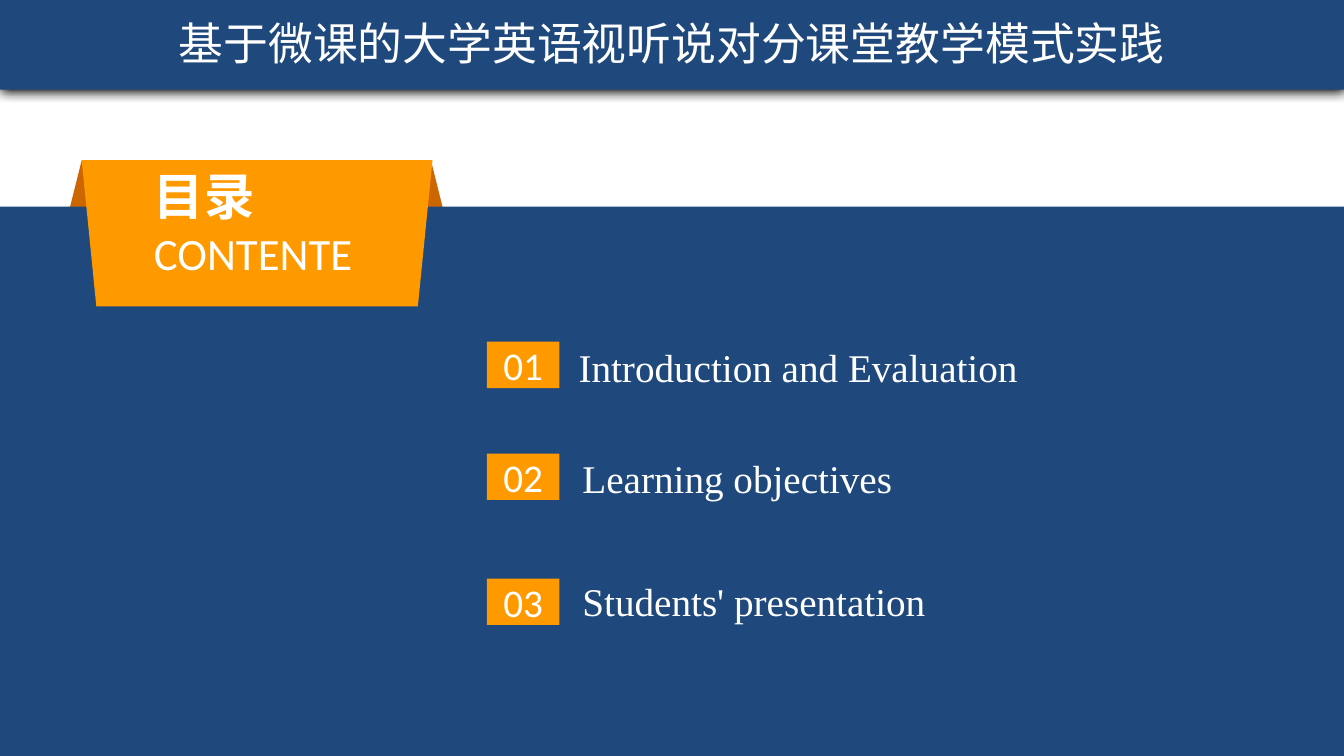
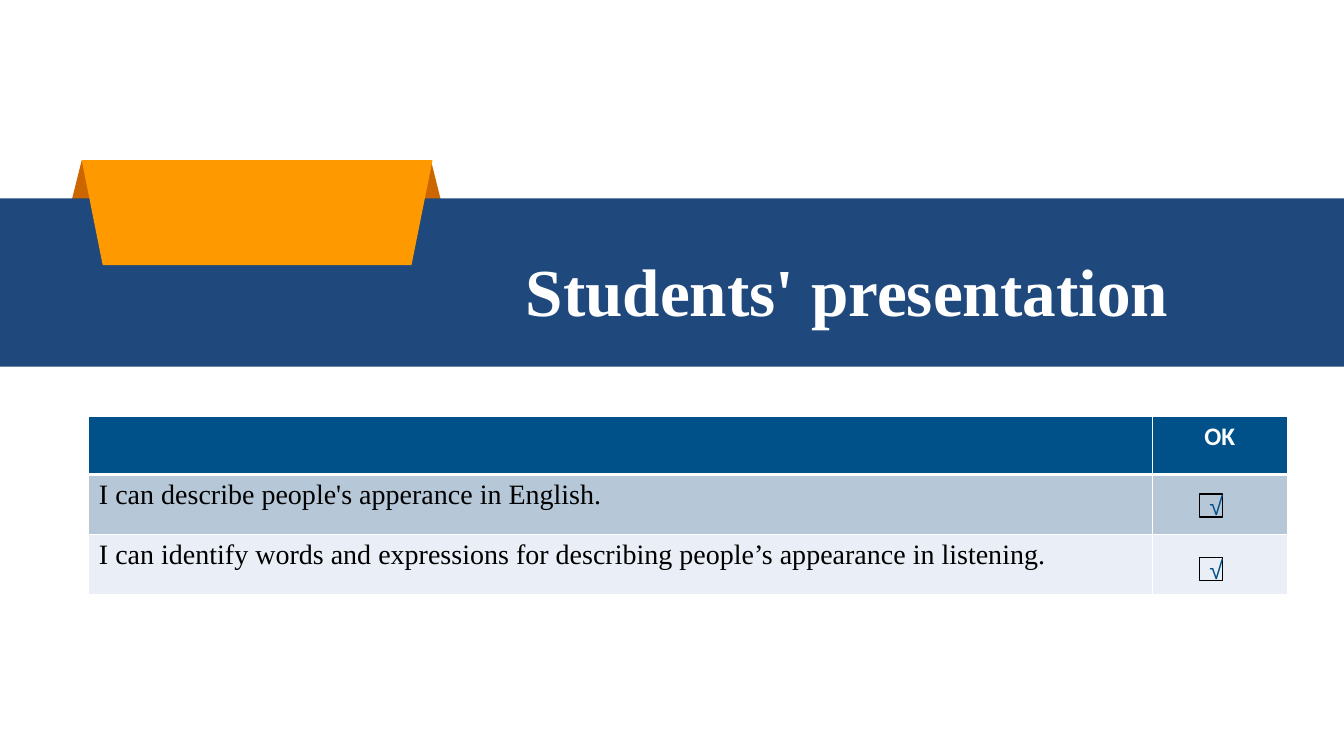
import pptx
import pptx.util
import pptx.dml.color
import pptx.enum.shapes
import pptx.enum.text
import pptx.oxml
import pptx.oxml.ns

Cm = pptx.util.Cm
Pt = pptx.util.Pt
MSO = pptx.enum.shapes.MSO_SHAPE
PP = pptx.enum.text.PP_ALIGN
ANCHOR = pptx.enum.text.MSO_ANCHOR
NS = pptx.oxml.ns.nsdecls("a")
W, H = 33.87, 19.05
COLORS = {
    "navy": "1F487C", "orange": "FF9900", "fold": "CC6600", "white": "FFFFFF",
    "black": "000000", "header": "00518A", "row_dark": "B6C7D8", "row_light": "EAEFF7",
}


def rgb(name):
    return pptx.dml.color.RGBColor.from_string(COLORS[name])


def write(tf, text, size=28, font="Calibri", color="white", bold=False,
          align=PP.LEFT, anchor=ANCHOR.TOP):
    tf.word_wrap = True
    tf.vertical_anchor = anchor
    for i, line in enumerate(text.split("\n")):
        p = tf.add_paragraph() if i else tf.paragraphs[0]
        p.alignment = align
        r = p.add_run()
        r.text = line
        r.font.size = Pt(size)
        r.font.name = font
        r.font.bold = bold
        r.font.color.rgb = rgb(color)


def add_shape(s, kind, left, top, width, height, fill=None, line=None):
    sp = s.shapes.add_shape(kind, Cm(left), Cm(top), Cm(width), Cm(height))
    sp.shadow.inherit = False
    if fill:
        sp.fill.solid()
        sp.fill.fore_color.rgb = rgb(fill)
    else:
        sp.fill.background()
    if line:
        sp.line.color.rgb = rgb(line)
        sp.line.width = Pt(1)
    else:
        sp.line.fill.background()
    return sp


prs = pptx.Presentation()
prs.slide_width, prs.slide_height = Cm(W), Cm(H)

for band_top, band_height, ribbon_height, slant in [(5.21, 13.84, 3.68, 0.1), (5, 4.24, 2.64, 0.2)]:
    s = prs.slides.add_slide(prs.slide_layouts[6])
    add_shape(s, MSO.TRAPEZOID, 1.57, 4.04, 9.78, 1.96, "fold")
    add_shape(s, MSO.RECTANGLE, 0, band_top, W, band_height, "navy")
    ribbon = add_shape(s, MSO.TRAPEZOID, 2.06, 4.04, 8.84, ribbon_height, "orange")
    ribbon.adjustments[0] = slant
    ribbon._element.spPr.find(pptx.oxml.ns.qn("a:xfrm")).set("flipV", "1")

contents, presentation = prs.slides

items = [
    ("Introduction and Evaluation", 14.33, 8.53, 8.61),
    ("Learning objectives", 14.43, 11.33, 11.43),
    ("Students' presentation", 14.43, 14.43, 14.58),
]
for n, (text, left, top, number_top) in enumerate(items, 1):
    tb = contents.shapes.add_textbox(Cm(left), Cm(top), Cm(13.4), Cm(1.45))
    write(tb.text_frame, text, font="Times New Roman")
    number = add_shape(contents, MSO.RECTANGLE, 12.27, number_top, 1.83, 1.17, "orange")
    write(number.text_frame, f"{n:02}", align=PP.CENTER, anchor=ANCHOR.MIDDLE)

tb = contents.shapes.add_textbox(Cm(3.63), Cm(4.04), Cm(7.26), Cm(3.18))
write(tb.text_frame, "目录\nCONTENTE", size=32)
heading = tb.text_frame.paragraphs[0].runs[0]
heading.font.size = Pt(36)
heading.font.bold = True

title = add_shape(contents, MSO.RECTANGLE, 0, -0.12, W, 2.38, "navy")
write(title.text_frame, "基于微课的大学英语视听说对分课堂教学模式实践", size=32,
      align=PP.CENTER, anchor=ANCHOR.MIDDLE)
title._element.spPr.find(pptx.oxml.ns.qn("a:effectLst")).append(pptx.oxml.parse_xml(
    f'<a:outerShdw {NS} blurRad="{Pt(8.5)}" dist="{Pt(1)}" dir="5400000" algn="t" rotWithShape="0">'
    f'<a:srgbClr val="{COLORS["black"]}"/></a:outerShdw>'))

tb = presentation.shapes.add_textbox(Cm(13), Cm(6.15), Cm(17.6), Cm(2.31))
write(tb.text_frame, "Students' presentation", size=48, font="Times New Roman", bold=True)

rows = [
    (1.47, "header", "", "OK"),
    (1.5, "row_dark", "I can describe people's apperance in English.", ""),
    (1.52, "row_light",
     "I can identify words and expressions for describing people’s appearance in listening.", ""),
]
table = presentation.shapes.add_table(3, 2, Cm(2.24), Cm(10.49), Cm(30.2), Cm(4.49)).table
table.columns[0].width, table.columns[1].width = Cm(26.8), Cm(3.4)
for i, (height, fill, *texts) in enumerate(rows):
    table.rows[i].height = Cm(height)
    for j, text in enumerate(texts):
        cell = table.cell(i, j)
        tcPr = cell._tc.get_or_add_tcPr()
        for side in "LRTB":
            thick = (i, side) in [(0, "B"), (1, "T")]
            tcPr.append(pptx.oxml.parse_xml(
                f'<a:ln{side} {NS} w="{Pt(3 if thick else 1)}"><a:solidFill>'
                f'<a:srgbClr val="{COLORS["white"]}"/></a:solidFill></a:ln{side}>'))
        cell.fill.solid()
        cell.fill.fore_color.rgb = rgb(fill)
        if text and i == 0:
            write(cell.text_frame, text, size=18, bold=True, align=PP.CENTER)
        elif text:
            write(cell.text_frame, text, size=20, font="Times New Roman", color="black")

for top in (12.45, 14.05):
    box = add_shape(presentation, MSO.RECTANGLE, 30.23, top, 0.58, 0.58, line="black")
    write(box.text_frame, "√", size=18, font="Arial", color="header",
          align=PP.CENTER, anchor=ANCHOR.MIDDLE)

prs.save("out.pptx")
